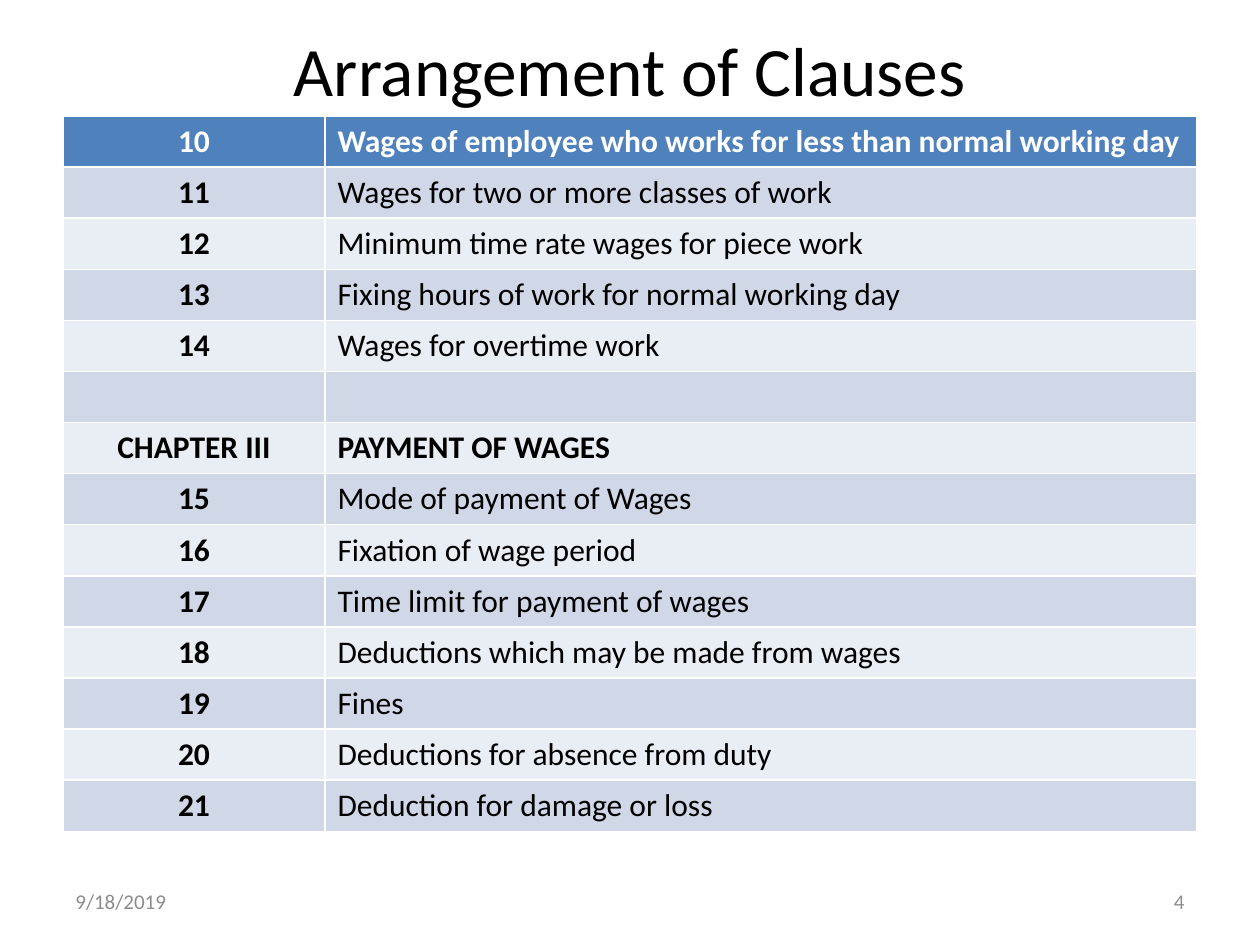
from pptx import Presentation
from pptx.dml.color import RGBColor
from pptx.enum.text import MSO_ANCHOR, PP_ALIGN
from pptx.util import Pt

EMU_PER_PX = 914400 / 126
FONT = "Calibri"
BLACK, WHITE, GREY = "000000", "FFFFFF", "8C8C8C"
HEADER, BANDS = "4F81BD", ("E9EDF4", "D0D8E8")

CLAUSES = [
    ("10", "Wages of employee who works for less than normal working day"),
    ("11", "Wages for two or more classes of work"),
    ("12", "Minimum time rate wages for piece work"),
    ("13", "Fixing hours of work for normal working day"),
    ("14", "Wages for overtime work"),
    ("", ""),
    ("CHAPTER III", "PAYMENT OF WAGES"),
    ("15", "Mode of payment of Wages"),
    ("16", "Fixation of wage period"),
    ("17", "Time limit for payment of wages"),
    ("18", "Deductions which may be made from wages"),
    ("19", "Fines"),
    ("20", "Deductions for absence from duty"),
    ("21", "Deduction for damage or loss"),
]


def px(length):
    return round(length * EMU_PER_PX)


def rgb(value):
    return RGBColor.from_string(value)


class ClauseSlide:
    def __init__(self, presentation):
        self.slide = presentation.slides.add_slide(presentation.slide_layouts[5])

    def set_text(self, frame, text, size, color, align=PP_ALIGN.LEFT, bold=False):
        frame.text = text
        paragraph = frame.paragraphs[0]
        paragraph.alignment = align
        font = paragraph.font
        font.name, font.size, font.bold = FONT, Pt(size), bold
        font.color.rgb = rgb(color)

    def title(self, text, left, top, width, height):
        heading = self.slide.shapes.title
        heading.left, heading.top = px(left), px(top)
        heading.width, heading.height = px(width), px(height)
        heading.text_frame.vertical_anchor = MSO_ANCHOR.MIDDLE
        self.set_text(heading.text_frame, text, 39.6, BLACK, PP_ALIGN.CENTER)

    def table(self, rows, left, top, widths, height):
        clauses = self.slide.shapes.add_table(
            len(rows), len(widths), px(left), px(top), px(sum(widths)), px(height)
        ).table
        for column, width in zip(clauses.columns, widths):
            column.width = px(width)
        for r, row in enumerate(rows):
            is_heading = r == 0 or row[0].startswith("CHAPTER")
            for c, text in enumerate(row):
                cell = clauses.cell(r, c)
                cell.fill.solid()
                cell.fill.fore_color.rgb = rgb(BANDS[r % 2] if r else HEADER)
                self.set_text(
                    cell.text_frame, text, 18, BLACK if r else WHITE,
                    PP_ALIGN.LEFT if c else PP_ALIGN.CENTER,
                    is_heading or c == 0,
                )

    def footer(self, text, left, top, width, height, align):
        frame = self.slide.shapes.add_textbox(
            px(left), px(top), px(width), px(height)
        ).text_frame
        frame.word_wrap = True
        frame.vertical_anchor = MSO_ANCHOR.MIDDLE
        self.set_text(frame, text, 12, GREY, align)


def main():
    presentation = Presentation()
    presentation.slide_width, presentation.slide_height = px(1260), px(945)
    page = ClauseSlide(presentation)
    page.title("Arrangement of Clauses", 63, 21, 1134, 95)
    page.table(CLAUSES, 63, 116, (262, 872), 716)
    page.footer("9/18/2019", 63, 876, 294, 50, PP_ALIGN.LEFT)
    page.footer("4", 903, 876, 294, 50, PP_ALIGN.RIGHT)
    presentation.save("out.pptx")


if __name__ == "__main__":
    main()
